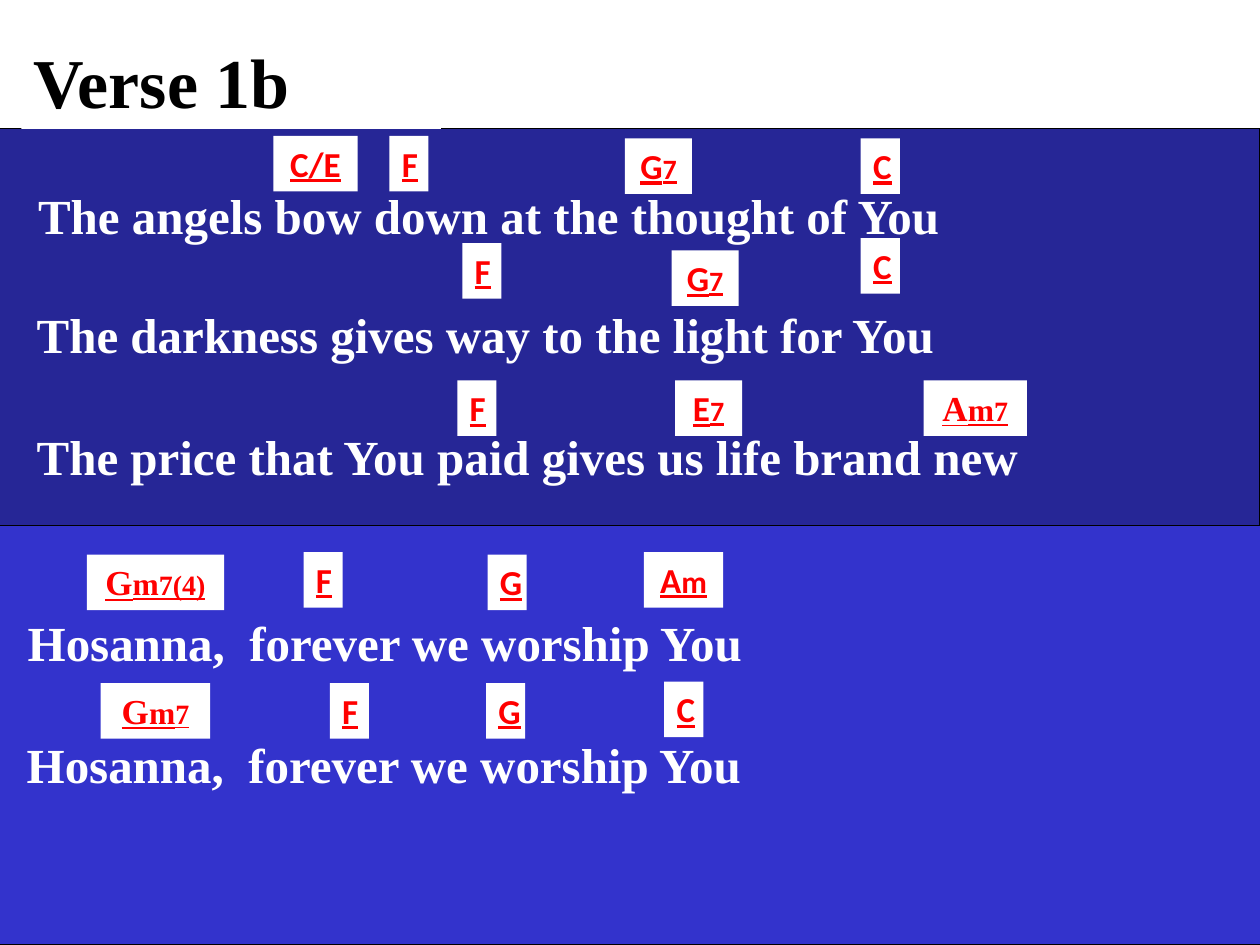
from pptx import Presentation
from pptx.dml.color import RGBColor as RGB
from pptx.enum.shapes import MSO_SHAPE as Form
from pptx.enum.text import MSO_ANCHOR as Anchor, MSO_AUTO_SIZE as Auto, PP_ALIGN as Align
from pptx.util import Cm, Pt

# Each lyric: left, top, words, chords (parts, left, top); all in cm
VERSE = [
    (0.03, 3.61, "The angels bow down at the thought of You",
     [("C/E", 5.51, 2.74), ("F", 7.85, 2.74), ("G 7", 12.6, 2.79), ("C", 17.35, 2.79)]),
    (0, 6.02, "The darkness gives way to the light for You",
     [("F", 9.32, 4.9), ("G 7", 13.54, 5.05), ("C", 17.35, 4.8)]),
    (0, 8.48, "The price that You paid gives us life brand new",
     [("F", 9.22, 7.67), ("E 7", 13.61, 7.67), ("A m 7", 18.62, 7.67)]),
    (-0.18, 12.22, "Hosanna,  forever we worship You",
     [("G m 7(4)", 1.75, 11.18), ("F", 6.12, 11.13), ("G", 9.83, 11.18),
      ("A m", 12.98, 11.13)]),
    (-0.2, 14.68, "Hosanna,  forever we worship You",
     [("G m 7", 2.03, 13.77), ("F", 6.65, 13.77), ("G", 9.8, 13.77), ("C", 13.39, 13.74)]),
]
WIDTHS = {"C/E": 1.7, "G 7": 1.35, "E 7": 1.35, "A m": 1.6,
          "A m 7": 2.08, "G m 7": 2.21, "G m 7(4)": 2.77}
SINGLE = 0.79


def color(code):
    return RGB.from_string(code)


def paint(item, code):
    item.fill.solid()
    item.fill.fore_color.rgb = color(code)


class Sheet:
    serif, sans = "Times New Roman", "Calibri"
    white, black, red = "FFFFFF", "000000", "FF0000"

    def __init__(self, slide):
        self.slide = slide
        self.shapes = slide.shapes

    def style(self, frame, face, size, code, align=Align.LEFT, fit=Auto.SHAPE_TO_FIT_TEXT):
        """Format the frame and return its paragraph."""
        frame.word_wrap = True
        frame.auto_size = fit
        frame.vertical_anchor = Anchor.TOP
        para = frame.paragraphs[0]
        para.alignment = align
        font = para.font
        font.name, font.size, font.bold = face, Pt(size), True
        font.color.rgb = color(code)
        return para

    def panel(self, x, y, w, h, code):
        box = self.shapes.add_shape(Form.RECTANGLE, Cm(x), Cm(y), Cm(w), Cm(h))
        box.shadow.inherit = False
        paint(box, code)
        box.line.color.rgb = color(self.black)
        box.line.width = Pt(0.75)

    def title(self, text, x, y, w, h):
        """Place the title, at a fixed size, above the panels already drawn."""
        box = self.shapes.title
        box.left, box.top, box.width, box.height = Cm(x), Cm(y), Cm(w), Cm(h)
        paint(box, self.white)
        box.text_frame.text = text
        self.style(box.text_frame, self.serif, 40, self.black, fit=Auto.NONE)
        self.shapes.element.append(box.element)

    def lyric(self, text, x, y):
        box = self.shapes.add_textbox(Cm(x), Cm(y), Cm(25.4), Cm(1.45))
        frame = box.text_frame
        frame.margin_left = Cm(0.74)
        self.style(frame, self.serif, 28, self.white).text = text

    def chord(self, name, x, y):
        """Draw a chord whose parts are root, minor mark and extension."""
        box = self.shapes.add_textbox(Cm(x), Cm(y), Cm(WIDTHS.get(name, SINGLE)), Cm(1.12))
        paint(box, self.white)
        root, *marks = name.split()
        face = self.serif if len(marks) == 2 else self.sans
        para = self.style(box.text_frame, face, 20, self.red, Align.CENTER)
        para.font.underline = True
        para.add_run().text = root
        for mark in marks:
            run = para.add_run()
            run.text = mark
            run.font.size = Pt(18 if mark == "m" else 16)


def main():
    deck = Presentation()
    deck.slide_width, deck.slide_height = Cm(25.4), Cm(19.05)
    sheet = Sheet(deck.slides.add_slide(deck.slide_layouts[5]))
    sheet.panel(-0.1, 10.41, 25.6, 8.64, "3333CC")
    sheet.panel(-0.05, 2.59, 25.45, 8, "262696")
    sheet.title("Verse 1b", 0.43, 0.64, 8.46, 1.96)
    for x, y, text, _ in VERSE:
        sheet.lyric(text, x, y)
    for *_, chords in VERSE:
        for chord in chords:
            sheet.chord(*chord)
    deck.save("out.pptx")


if __name__ == "__main__":
    main()
